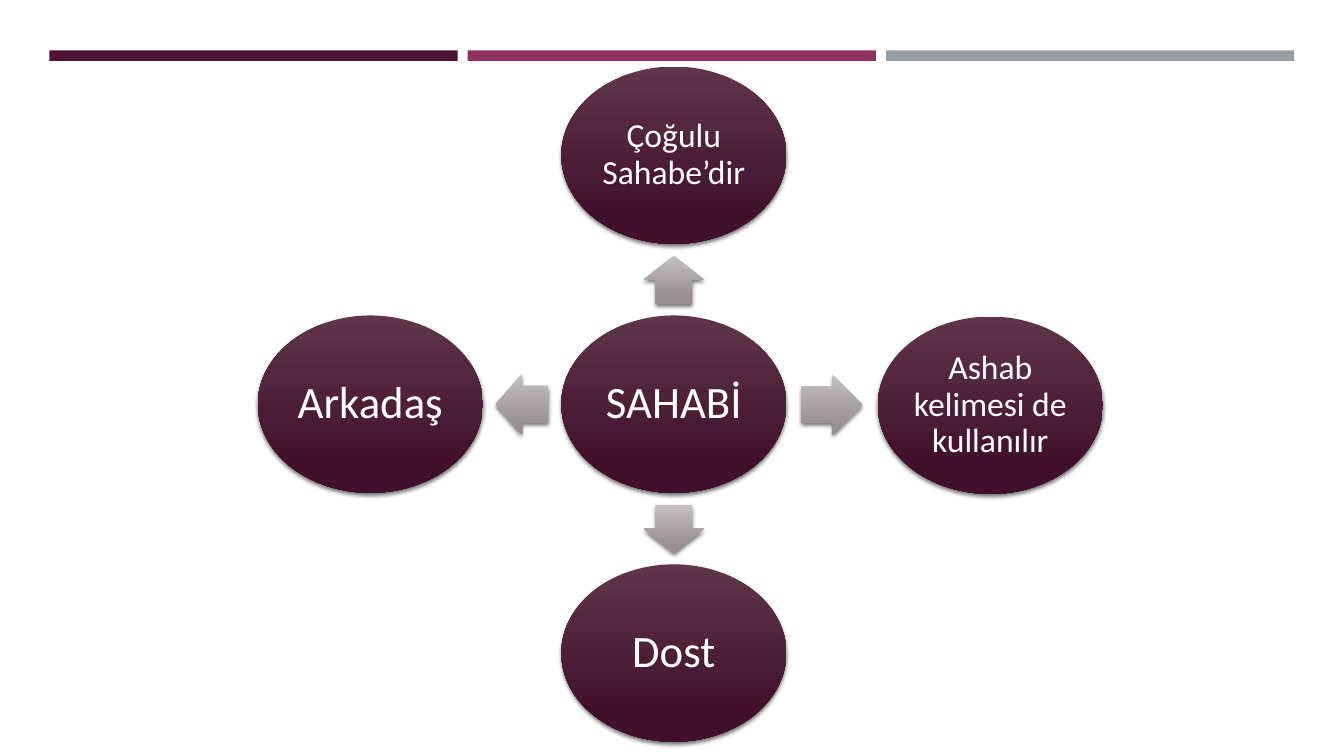
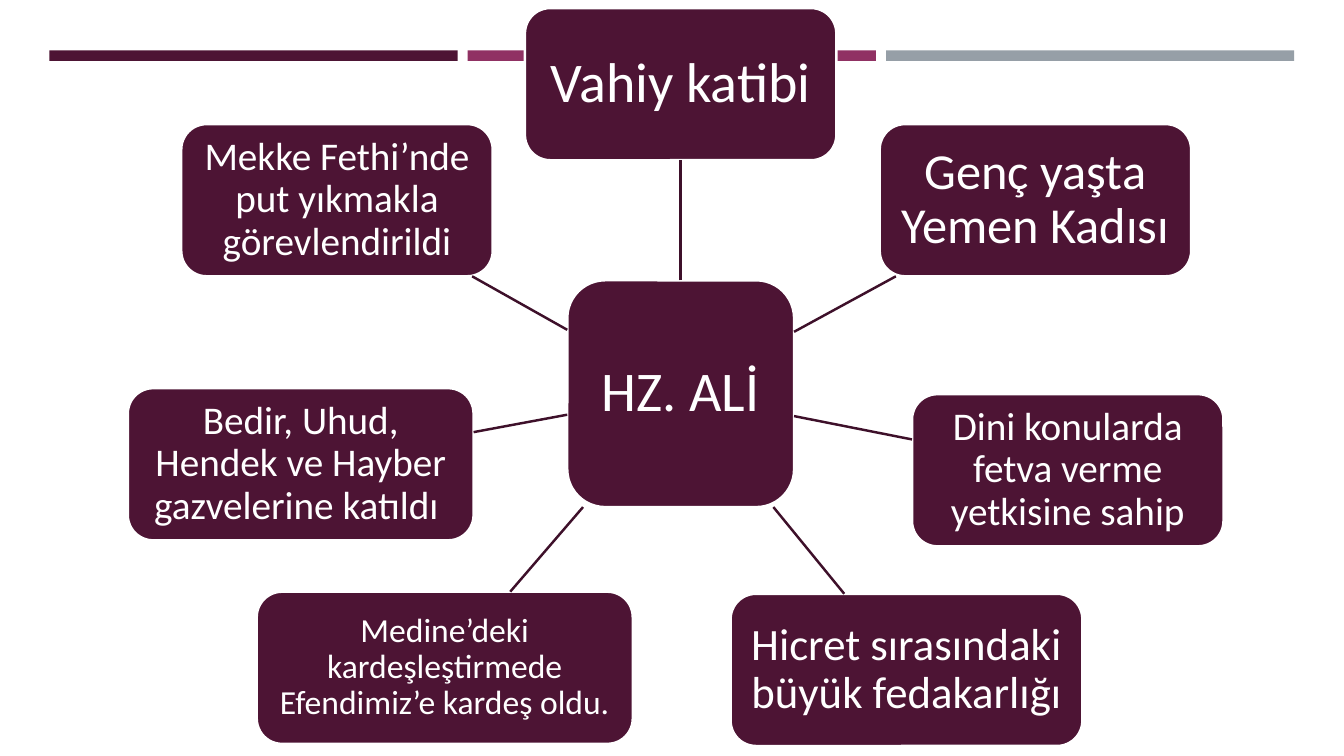
from lxml import etree
from pptx import Presentation
from pptx import util as u
from pptx.dml.color import RGBColor
from pptx.enum import shapes, text
from pptx.oxml.ns import qn

PLUM, ROSE, GREY, WHITE = "4D1434", "903163", "969FA7", "FFFFFF"
LINE = "3E102A"
ELLIPSE_FADE = ("5F3649", "41112C")
ARROW_FADE = ("C5C0C2", "978F92")
FONT = "Calibri"
SHAPE = shapes.MSO_SHAPE


def rgb(code):
    return RGBColor.from_string(code)


# Shared parts
def add_box(page, kind, center, size, fill, outline=None):
    """Place a preset shape around its center, without shadow."""
    (x, y), (width, height) = center, size
    box = page.shapes.add_shape(kind, u.Pt(x - width / 2), u.Pt(y - height / 2),
                                u.Pt(width), u.Pt(height))
    box.shadow.inherit = False
    if isinstance(fill, tuple):
        fade(box, fill)
    else:
        box.fill.solid()
        box.fill.fore_color.rgb = rgb(fill)
    if outline:
        box.line.color.rgb = rgb(outline)
        box.line.width = u.Pt(1.75)
    else:
        box.line.fill.background()
    return box


def fade(box, codes):
    """Fill from top to bottom and cast a soft shadow downwards."""
    box.fill.gradient()
    box.fill.gradient_angle = 270
    for stop, code, position in zip(box.fill.gradient_stops, codes, (0, 0.84)):
        stop.color.rgb = rgb(code)
        stop.position = position
    effects = box.element.spPr.find(qn("a:effectLst"))
    shadow = etree.SubElement(effects, qn("a:outerShdw"), blurRad=str(u.Pt(3)),
                              dist=str(u.Pt(2)), dir="5400000", rotWithShape="0")
    tint = etree.SubElement(shadow, qn("a:srgbClr"), val="000000")
    etree.SubElement(tint, qn("a:alpha"), val="55000")


def write(box, words, size, inset):
    frame = box.text_frame
    frame.text = words
    frame.word_wrap = True
    frame.vertical_anchor = text.MSO_ANCHOR.MIDDLE
    frame.margin_left = frame.margin_right = u.Pt(inset)
    frame.margin_top = frame.margin_bottom = u.Pt(inset)
    para = frame.paragraphs[0]
    para.alignment = text.PP_ALIGN.CENTER
    para.line_spacing = 0.9
    font = para.runs[0].font
    font.name, font.size, font.color.rgb = FONT, u.Pt(size), rgb(WHITE)


def add_page(deck):
    """Add a blank page with the three bands along its top."""
    page = deck.slides.add_slide(deck.slide_layouts[6])
    width, pitch, left = 291.6, 301.4 - 2.6, 35.3
    for column, code in enumerate((PLUM, ROSE, GREY)):
        center = (left + column * pitch + width / 2, 39.75)
        add_box(page, SHAPE.RECTANGLE, center, (width, 7.5), code)
    return page


# Ellipses around a central one, with block arrows between
def radial_arrows(page, center, title, nodes):
    size, breadth = (160.8, 126.7), 43.2

    def add_ellipse(middle, words, points):
        box = add_box(page, SHAPE.OVAL, middle, size, ELLIPSE_FADE)
        write(box, words, points, points * 0.09)

    x, y = center
    add_ellipse(center, title, 32)
    for kind, dx, dy, words, points in nodes:
        if dx:
            arrow_size = ((abs(dx) - size[0]) * 0.67, breadth)
        else:
            arrow_size = (breadth, (abs(dy) - size[1]) * 0.67)
        arrow = add_box(page, kind, (x + dx / 2, y + dy / 2), arrow_size, ARROW_FADE)
        arrow.adjustments[0], arrow.adjustments[1] = 0.6, 0.5
        add_ellipse((x + dx, y + dy), words, points)


# Rounded boxes around a central one, joined by lines
def radial_cluster(page, center, title, nodes):
    hub_size, height = (162, 162), 108.7

    def add_node(middle, size, words, points):
        box = add_box(page, SHAPE.ROUNDED_RECTANGLE, middle, size, PLUM, WHITE)
        write(box, words, points, points * 0.2)
        return box

    def edge_share(dx, dy, size):
        """Share of the center-to-center ray that lies inside a box."""
        return min(side / 2 / abs(step) for side, step in zip(size, (dx, dy)) if step)

    x, y = center
    hub = add_node(center, hub_size, title, 40)
    for dx, dy, width, words, points in nodes:
        size = (width, height)
        box = add_node((x + dx, y + dy), size, words, points)
        start = edge_share(dx, dy, hub_size)
        end = 1 - edge_share(dx, dy, size)
        spoke = page.shapes.add_connector(
            shapes.MSO_CONNECTOR.STRAIGHT,
            u.Pt(x + dx * start), u.Pt(y + dy * start),
            u.Pt(x + dx * end), u.Pt(y + dy * end))
        if dx == 0:
            spoke.begin_connect(hub, 0)
            spoke.end_connect(box, 2)
        spoke.line.color.rgb = rgb(LINE)
        spoke.line.width = u.Pt(1.75)
        etree.SubElement(spoke.element.spPr, qn("a:effectLst"))


def main():
    deck = Presentation()
    deck.slide_width, deck.slide_height = u.Pt(960), u.Pt(540)

    radial_arrows(add_page(deck), (481.3, 288.7), "SAHABİ", [
        (SHAPE.UP_ARROW, 0, -177.8, "Çoğulu Sahabe’dir", 24),
        (SHAPE.RIGHT_ARROW, 226.1, 0.8, "Ashab kelimesi de kullanılır", 24),
        (SHAPE.DOWN_ARROW, 0, 177.8, "Dost", 32),
        (SHAPE.LEFT_ARROW, -216.8, 0, "Arkadaş", 32),
    ])

    radial_cluster(add_page(deck), (486.2, 281.2), "HZ. ALİ", [
        (0, -221.1, 222.5, "Vahiy katibi", 40),
        (253.4, -138.2, 222.5, "Genç yaşta Yemen Kadısı", 36),
        (276.5, 54.7, 222.5, "Dini konularda fetva verme yetkisine sahip", 28),
        (161.3, 197.3, 251.3, "Hicret sırasındaki büyük fedakarlığı", 32),
        (-168.5, 195.8, 268.6,
         "Medine’deki kardeşleştirmede Efendimiz’e kardeş oldu.", 24),
        (-271.4, 50.4, 247, "Bedir, Uhud, Hendek ve Hayber gazvelerine katıldı ", 28),
        (-245.5, -138.2, 222.5, "Mekke Fethi’nde put yıkmakla görevlendirildi", 28),
    ])

    deck.save("out.pptx")


if __name__ == "__main__":
    main()
